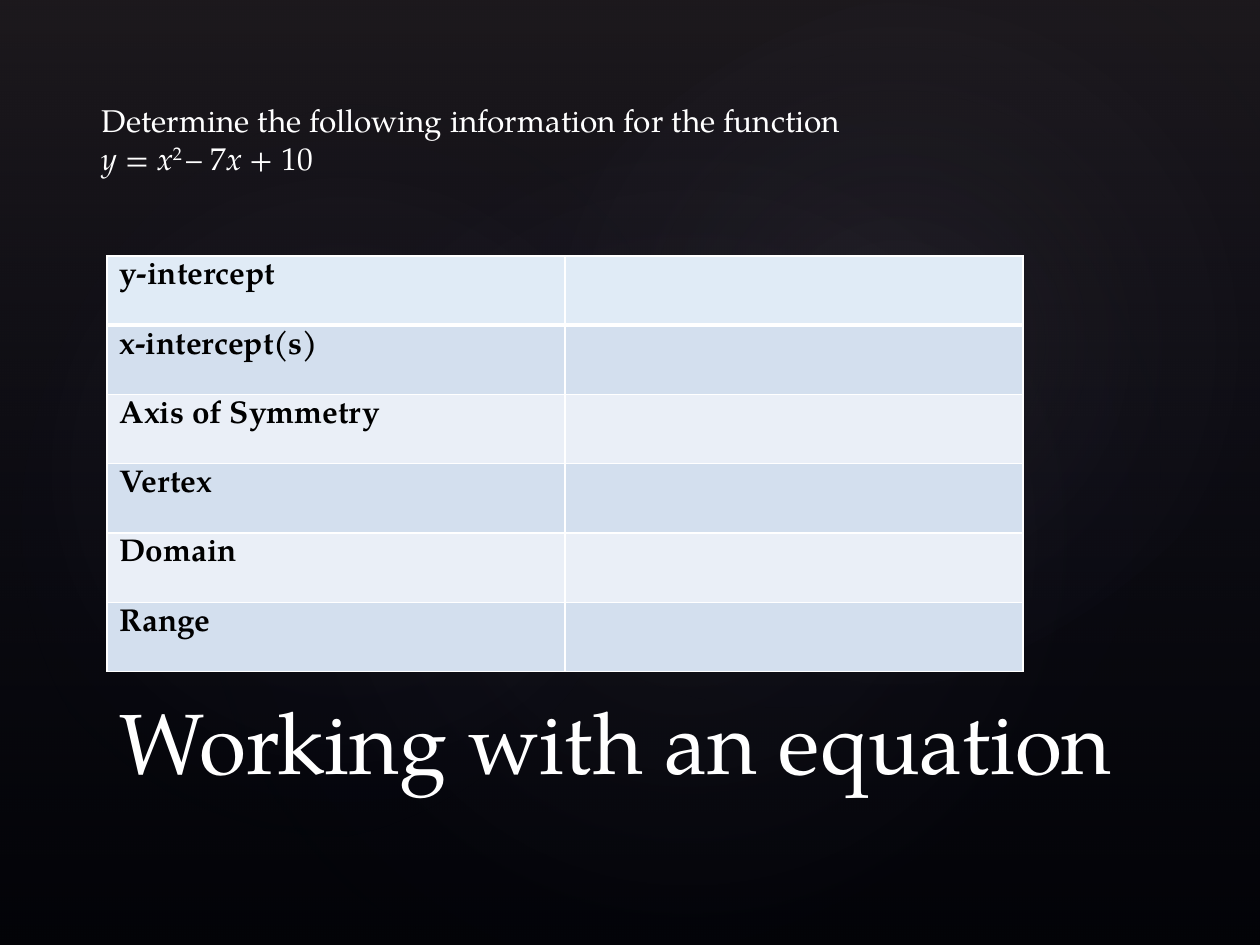
import dataclasses

import lxml.etree
import pptx
import pptx.dml.color
import pptx.enum.shapes
import pptx.enum.text
import pptx.oxml
import pptx.oxml.ns
import pptx.util

WIDTH, HEIGHT = pptx.util.Inches(10), pptx.util.Inches(7.5)
COLUMNS, ROWS = 100, 75


@dataclasses.dataclass(frozen=True)
class Theme:
    font: str = "TeX Gyre Pagella"
    background: str = "000000"
    light_text: str = "FFFFFF"
    dark_text: str = "000000"
    header: str = "E0EBF6"
    bands: tuple = ("D3DFEE", "EAEFF7")
    border: str = "FFFFFF"
    veil: str = "504652"
    glow: str = "C4BCC6"
    navy: str = "242852"
    title_size: int = 49
    body_size: int = 18


THEME = Theme()
PROPERTIES = ["y-intercept", "x-intercept(s)", "Axis of Symmetry", "Vertex", "Domain", "Range"]
EQUATION = [("y ", "italic"), ("= ", ""), ("x", "italic"), ("2 ", "super"),
            ("– 7", ""), ("x", "italic"), (" + 10", "")]


def place(left, top, width, height):
    """Turn grid columns and rows into a box of slide lengths."""
    column, row = WIDTH / COLUMNS, HEIGHT / ROWS
    return [round(n) for n in (left * column, top * row, width * column, height * row)]


def color(value):
    return pptx.dml.color.RGBColor.from_string(value)


def style(paragraph, size, ink, bold=False):
    font = paragraph.font
    font.name, font.size, font.bold = THEME.font, pptx.util.Pt(size), bold
    font.color.rgb = color(ink)


def add_gradient(slide, kind, box, stops, direction, rotation=0):
    """Add a borderless shape whose (percent, colour, opacity) stops are translucent."""
    shape = slide.shapes.add_shape(kind, *box)
    shape.rotation = rotation
    shape.shadow.inherit = False
    shape.line.fill.background()
    stop_xml = "".join(
        f'<a:gs pos="{position * 1000}"><a:srgbClr val="{value}">'
        f'<a:alpha val="{opacity * 1000}"/></a:srgbClr></a:gs>'
        for position, value, opacity in stops)
    gradient = pptx.oxml.parse_xml(
        f'<a:gradFill {pptx.oxml.ns.nsdecls("a")} rotWithShape="1">'
        f'<a:gsLst>{stop_xml}</a:gsLst>{direction}</a:gradFill>')
    shape._element.spPr.find(pptx.oxml.ns.qn("a:prstGeom")).addnext(gradient)


def add_backdrop(slide, box):
    slide.background.fill.solid()
    slide.background.fill.fore_color.rgb = color(THEME.background)
    kinds = pptx.enum.shapes.MSO_SHAPE
    add_gradient(slide, kinds.RECTANGLE, box,
                 [(0, THEME.veil, 36), (100, THEME.navy, 10)], '<a:lin ang="5400000" scaled="0"/>')
    radial = '<a:path path="circle"><a:fillToRect l="50000" t="50000" r="50000" b="50000"/></a:path>'
    for glow_box, rotation, opacity in [(place(15, 11.4, 79.2, 62.4), 328.7, 7),
                                        (place(-3, 12.8, 60.6, 49), 294.3, 8),
                                        (place(35.8, 1.3, 70.9, 52), 328.7, 8)]:
        add_gradient(slide, kinds.OVAL, glow_box,
                     [(0, THEME.glow, opacity), (58, THEME.navy, 0)], radial, rotation)


def border_cell(cell, bottom_width):
    properties = cell._tc.get_or_add_tcPr()
    for index, (side, width) in enumerate([("L", 1), ("R", 1), ("T", 1), ("B", bottom_width)]):
        properties.insert(index, pptx.oxml.parse_xml(
            f'<a:ln{side} {pptx.oxml.ns.nsdecls("a")} w="{pptx.util.Pt(width)}">'
            f'<a:solidFill><a:srgbClr val="{THEME.border}"/></a:solidFill></a:ln{side}>'))


def add_answer_table(slide, box):
    table = slide.shapes.add_table(len(PROPERTIES), 2, *box).table
    for row, label in enumerate(PROPERTIES):
        table.cell(row, 0).text = label
        for cell in table.rows[row].cells:
            cell.fill.solid()
            cell.fill.fore_color.rgb = color(THEME.bands[(row - 1) % 2] if row else THEME.header)
            border_cell(cell, 1 if row else 3)
            style(cell.text_frame.paragraphs[0], THEME.body_size, THEME.dark_text, bold=True)


def add_text_frame(slide, box):
    frame = slide.shapes.add_textbox(*box).text_frame
    frame.word_wrap = True
    return frame


def add_title(slide, box):
    frame = add_text_frame(slide, box)
    frame.vertical_anchor = pptx.enum.text.MSO_ANCHOR.BOTTOM
    frame.text = "Working with an equation"
    style(frame.paragraphs[0], THEME.title_size, THEME.light_text)


def add_question(slide, box):
    frame = add_text_frame(slide, box)
    frame.auto_size = pptx.enum.text.MSO_AUTO_SIZE.SHAPE_TO_FIT_TEXT
    frame.text = "Determine the following information for the function"
    equation = frame.add_paragraph()
    for text, form in EQUATION:
        run = equation.add_run()
        run.text = text
        run.font.italic = form == "italic"
        if form == "super":
            run._r.get_or_add_rPr().set("baseline", "30000")
    for paragraph in frame.paragraphs:
        style(paragraph, THEME.body_size, THEME.light_text)


def main():
    deck = pptx.Presentation()
    deck.slide_width, deck.slide_height = WIDTH, HEIGHT
    slide = deck.slides.add_slide(deck.slide_layouts[6])
    add_backdrop(slide, place(0, 0, COLUMNS, ROWS))
    add_answer_table(slide, place(8.5, 20.3, 72.7, 33))
    add_title(slide, place(8.5, 53.3, 82.5, 10))
    add_question(slide, place(7.1, 7.5, 80.7, 7.1))
    deck.save("out.pptx")


if __name__ == "__main__":
    main()
